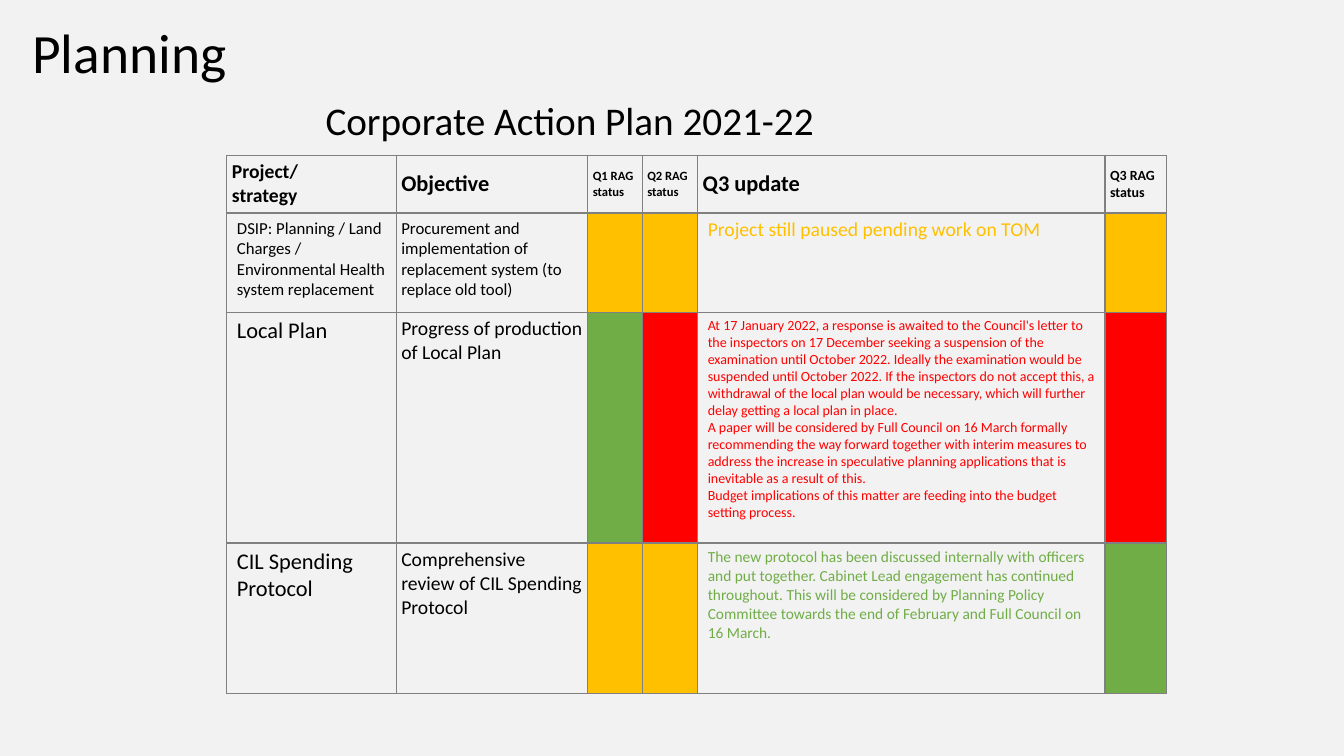
"""Build the Planning slide with its RAG status table."""
from lxml import etree
from pptx import Presentation
from pptx.dml.color import RGBColor
from pptx.enum.text import MSO_ANCHOR as Anchor, MSO_AUTO_SIZE as AutoSize, PP_ALIGN as Align
from pptx.oxml.ns import qn
from pptx.util import Inches, Pt

BLACK, GREY, PAPER = "000000", "808080", "F2F2F2"
AMBER, RED, GREEN = "FFC000", "FF0000", "70AD47"

HEADERS = [("Project/\nstrategy", 14), ("Objective", 16), ("Q1 RAG status", 9),
           ("Q2 RAG status", 9), ("Q3 update", 16), ("Q3 RAG status", 10)]
PROJECTS = [
    dict(project=("DSIP: Planning / Land Charges / Environmental Health system replacement", 12),
         objective=("Procurement and implementation of replacement system (to replace old tool)", 12),
         update=("Project still paused pending work on TOM", 14),
         status=(AMBER, AMBER, AMBER)),
    dict(project=("Local Plan", 16),
         objective=("Progress of production of Local Plan", 14),
         update=("At 17 January 2022, a response is awaited to the Council's letter to the inspectors "
                 "on 17 December seeking a suspension of the examination until October 2022. Ideally "
                 "the examination would be suspended until October 2022. If the inspectors do not "
                 "accept this, a withdrawal of the local plan would be necessary, which will further "
                 "delay getting a local plan in place.\n"
                 "A paper will be considered by Full Council on 16 March formally recommending the "
                 "way forward together with interim measures to address the increase in speculative "
                 "planning applications that is inevitable as a result of this.\n"
                 "Budget implications of this matter are feeding into the budget setting process.", 10),
         status=(GREEN, RED, RED)),
    dict(project=("CIL Spending Protocol", 16),
         objective=("Comprehensive review of CIL Spending Protocol", 14),
         update=("The new protocol has been discussed internally with officers and put together. "
                 "Cabinet Lead engagement has continued throughout. This will be considered by "
                 "Planning Policy Committee towards the end of February and Full Council on "
                 "16 March.", 11),
         status=(AMBER, AMBER, GREEN)),
]
COLUMN_WIDTHS = [1.68, 1.9, 0.54, 0.55, 4.04, 0.61]
ROW_HEIGHTS = [0.56, 0.92, 2.29, 1.49]
TIGHT = (0.05, 0.05, 0.05, 0.05)
ROOMY = (0.1, 0.05, 0.1, 0.12)


def rgb(color):
    return RGBColor.from_string(color)


def write(frame, text, size, color=BLACK, bold=False, spacing=None):
    frame.word_wrap = True
    for index, line in enumerate(text.split("\n")):
        para = frame.add_paragraph() if index else frame.paragraphs[0]
        para.alignment = Align.LEFT
        para.line_spacing = spacing
        span = para.add_run()
        span.text = line
        font = span.font
        font.name, font.size, font.bold = "Calibri", Pt(size), bold
        font.color.rgb = rgb(color)


def heading(box, place, text, size):
    box.left, box.top, box.width, box.height = map(Inches, place)
    frame = box.text_frame
    frame.auto_size = AutoSize.NONE
    frame.vertical_anchor = Anchor.BOTTOM
    write(frame, text, size, spacing=0.9)


def style_cell(cell, fill=None, margins=TIGHT, anchor=Anchor.TOP):
    cell.margin_left, cell.margin_top, cell.margin_right, cell.margin_bottom = map(Inches, margins)
    cell.vertical_anchor = anchor
    properties = cell._tc.get_or_add_tcPr()
    for side in ("a:lnL", "a:lnR", "a:lnT", "a:lnB"):
        line = etree.SubElement(properties, qn(side), w=str(Pt(1)))
        solid = etree.SubElement(line, qn("a:solidFill"))
        etree.SubElement(solid, qn("a:srgbClr"), val=GREY)
    if fill:
        cell.fill.solid()
        cell.fill.fore_color.rgb = rgb(fill)
    else:
        cell.fill.background()


def add_status_table(page):
    frame = page.shapes.add_table(len(ROW_HEIGHTS), len(COLUMN_WIDTHS), Inches(2.25), Inches(1.54),
                                  Inches(sum(COLUMN_WIDTHS)), Inches(sum(ROW_HEIGHTS)))
    table = frame.table
    table.first_row = table.horz_banding = False
    for column, width in zip(table.columns, COLUMN_WIDTHS):
        column.width = Inches(width)
    for row, height in zip(table.rows, ROW_HEIGHTS):
        row.height = Inches(height)
    for column, (text, size) in enumerate(HEADERS):
        cell = table.cell(0, column)
        style_cell(cell, anchor=Anchor.MIDDLE)
        write(cell.text_frame, text, size, bold=True)
    for row, item in enumerate(PROJECTS, 1):
        for column, fill in zip((2, 3, 5), item["status"]):
            style_cell(table.cell(row, column), fill)
        for column, key, margins, color in ((0, "project", ROOMY, BLACK),
                                            (1, "objective", TIGHT, BLACK),
                                            (4, "update", ROOMY, item["status"][-1])):
            cell = table.cell(row, column)
            style_cell(cell, margins=margins)
            write(cell.text_frame, *item[key], color=color)


def main():
    deck = Presentation()
    deck.slide_width, deck.slide_height = Inches(13.33), Inches(7.5)
    page = deck.slides.add_slide(deck.slide_layouts[5])
    page.background.fill.solid()
    page.background.fill.fore_color.rgb = rgb(PAPER)
    heading(page.shapes.title, (0.22, 0.45, 6.15, 0.45), "Planning", 39.6)
    subtitle = page.shapes.add_textbox(0, 0, 0, 0)
    heading(subtitle, (3.13, 0.45, 5.15, 1.03), "Corporate Action Plan 2021-22", 28)
    add_status_table(page)
    deck.save("out.pptx")


if __name__ == "__main__":
    main()
